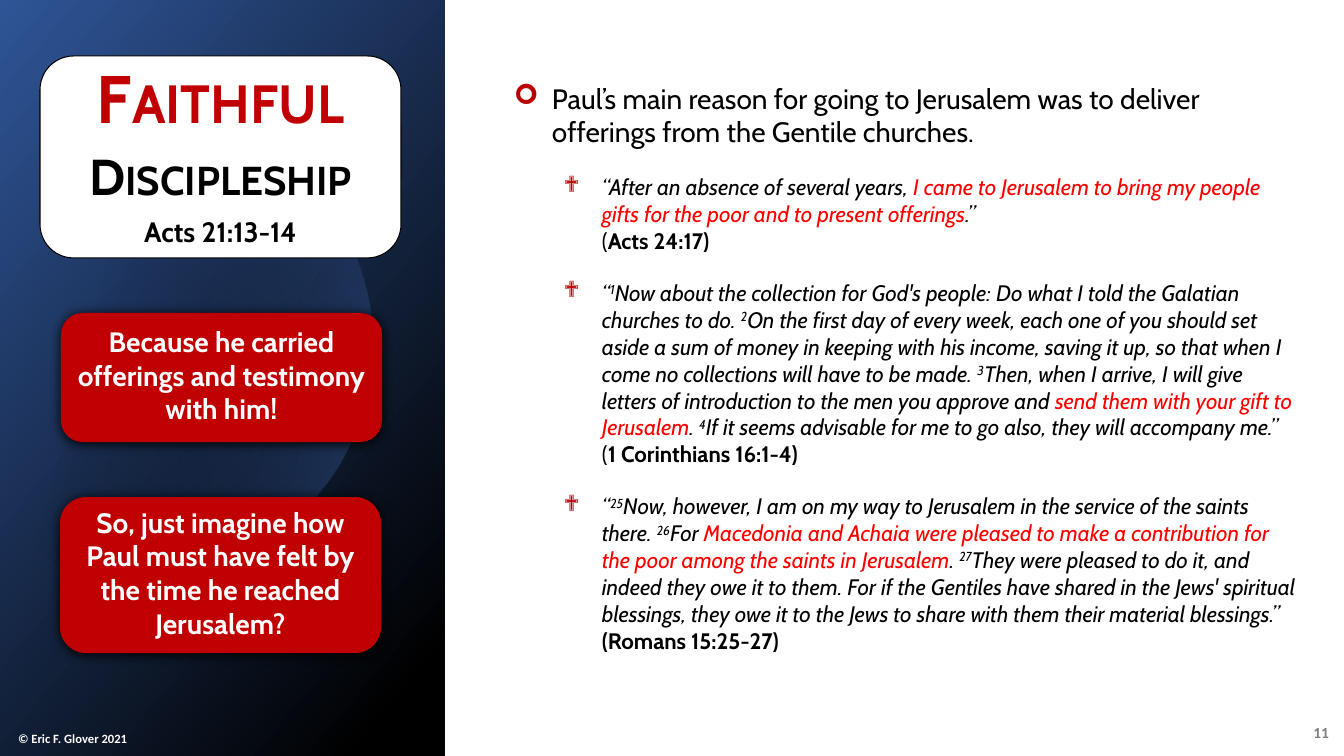
"""Build the Faithful Discipleship slide on Paul's offerings for Jerusalem."""
from math import cos, radians, sin

from lxml.etree import SubElement
from pptx import Presentation
from pptx.dml.color import RGBColor
from pptx.enum.shapes import MSO_SHAPE as Preset
from pptx.enum.text import MSO_ANCHOR as Anchor, PP_ALIGN as Align
from pptx.oxml.ns import qn
from pptx.util import Pt

EMU_PER_PX = 914400 / 100.8
RED, BULLET_RED, BLACK, WHITE = "C00000", "B90000", "000000", "FFFFFF"
QUOTE = {"size": 16, "italic": True}
STYLES = {
    "quote": QUOTE,
    "verse": QUOTE | {"raised": True},
    "stress": QUOTE | {"color": "FF0000"},
    "open": {"size": 16},
    "source": {"size": 16, "bold": True},
}
PASSAGES = [
    ([("quote", "“After an absence of several years, "),
      ("stress", "I came to Jerusalem to bring my people gifts for the poor and to present offerings"),
      ("quote", ".” ")],
     [("open", "("), ("source", "Acts 24:17)")]),
    ([("quote", "“"), ("verse", "1"),
      ("quote", "Now about the collection for God's people: Do what I told the Galatian churches to do. "),
      ("verse", "2"),
      ("quote", "On the first day of every week, each one of you should set aside a sum of money in keeping "
                "with his income, saving it up, so that when I come no collections will have to be made. "),
      ("verse", "3"),
      ("quote", "Then, when I arrive, I will give letters of introduction to the men you approve and "),
      ("stress", "send them with your gift to Jerusalem"), ("quote", ". "), ("verse", "4"),
      ("quote", "If it seems advisable for me to go also, they will accompany me.”")],
     [("open", "("), ("source", "1 Corinthians 16:1-4)")]),
    ([("quote", "“"), ("verse", "25"),
      ("quote", "Now, however, I am on my way to Jerusalem in the service of the saints there. "),
      ("verse", "26"), ("quote", "For "),
      ("stress", "Macedonia and Achaia were pleased to make a contribution for the poor among the saints "
                 "in Jerusalem"),
      ("quote", ". "), ("verse", "27"),
      ("quote", "They were pleased to do it, and indeed they owe it to them. For if the Gentiles have shared "
                "in the Jews' spiritual blessings, they owe it to the Jews to share with them their material "
                "blessings.”")],
     [("source", "(Romans 15:25-27)")]),
]


def px(length):
    """Turn pixels into EMU."""
    return round(length * EMU_PER_PX)


def color(value):
    """Turn a hex string into a colour."""
    return RGBColor.from_string(value)


def set_all(target, values):
    """Set each named attribute of the target."""
    for name, value in values.items():
        setattr(target, name, value)


def add_span(para, text, size, color_hex=BLACK, bold=False, italic=False, font="Cabin",
             raised=False, small_caps=False):
    """Add one formatted run to a paragraph."""
    span = para.add_run()
    span.text = text
    set_all(span.font, {"size": Pt(size), "bold": bold, "italic": italic, "name": font})
    span.font.color.rgb = color(color_hex)
    properties = span.font._element
    if raised:
        properties.set("baseline", "30000")
    if small_caps:
        properties.set("cap", "small")


def add_styled(para, spans):
    """Add runs given as pairs of style name and text."""
    for style, text in spans:
        values = dict(STYLES[style])
        add_span(para, text, color_hex=values.pop("color", BLACK), **values)


def add_bullet(para, mark, indent):
    """Give a paragraph a red bullet with a hanging indent."""
    para.space_after = Pt(18)
    properties = para._p.get_or_add_pPr()
    properties.set("marL", str(px(indent)))
    properties.set("indent", str(px(-38)))
    bullet_color = SubElement(properties, qn("a:buClr"))
    SubElement(bullet_color, qn("a:srgbClr"), val=BULLET_RED)
    SubElement(properties, qn("a:buFont"), typeface="Wingdings")
    SubElement(properties, qn("a:buChar"), char=mark)


def fill_gradient(shape, stops, angle):
    """Fill a shape with two stops of position, colour and opacity at a clockwise angle."""
    shape.fill.gradient()
    shape.fill.gradient_angle = 360 - angle
    for stop, (position, color_hex, opacity) in zip(shape.fill.gradient_stops, stops):
        stop.position = position
        stop.color.rgb = color(color_hex)
        if opacity < 100:
            mark = stop._gs.find(qn("a:srgbClr"))
            SubElement(mark, qn("a:alpha"), val=str(opacity * 1000))


def add_box(page, place, preset, fill=None):
    """Add a preset shape without shadow or line."""
    box = page.shapes.add_shape(preset, *map(px, place))
    box.shadow.inherit = False
    box.line.fill.background()
    if fill:
        box.fill.solid()
        box.fill.fore_color.rgb = color(fill)
    return box


def set_frame(shape, anchor, margins):
    """Wrap and anchor the text of a shape and set left, top, right and bottom margins."""
    frame = shape.text_frame
    set_all(frame, {"word_wrap": True, "vertical_anchor": anchor})
    sides = ("margin_left", "margin_top", "margin_right", "margin_bottom")
    set_all(frame, dict(zip(sides, map(px, margins))))
    return frame


def add_panel(page):
    """Add the dark side panel and the faint disc on it."""
    panel = add_box(page, (0, 0, 445, 756), Preset.RECTANGLE)
    fill_gradient(panel, [(0, "2F5597", 100), (0.92, BLACK, 100)], 40)
    center_x, center_y, radius = 140, 344, 233
    arc = [(px(center_x + radius * cos(radians(turn))), px(center_y + radius * sin(radians(turn))))
           for turn in range(-126, 127, 2)]
    builder = page.shapes.build_freeform(*arc[0])
    builder.add_line_segments(arc[1:], close=True)
    disc = builder.convert_to_shape()
    disc.shadow.inherit = False
    disc.line.fill.background()
    fill_gradient(disc, [(0.29, BLACK, 0), (1, "4472C4", 43)], 14)


def add_title(page):
    """Add the white title card."""
    card = add_box(page, (40, 56, 361, 202), Preset.ROUNDED_RECTANGLE, WHITE)
    card.line.color.rgb = color(BLACK)
    card.line.width = Pt(0.75)
    frame = set_frame(card, Anchor.MIDDLE, (0, 0, 0, 10))
    lines = [("Faithful", 48, RED, True), ("Discipleship", 36, BLACK, True),
             ("Acts 21:13-14", 20, BLACK, False)]
    for index, (text, size, color_hex, small_caps) in enumerate(lines):
        para = frame.add_paragraph() if index else frame.paragraphs[0]
        set_all(para, {"alignment": Align.CENTER, "space_after": Pt(6)})
        add_span(para, text, size, color_hex, bold=True, small_caps=small_caps)


def add_callout(page, place, text):
    """Add a red card with a soft shadow."""
    card = add_box(page, place, Preset.ROUNDED_RECTANGLE, RED)
    effects = card._element.spPr.find(qn("a:effectLst"))
    shadow = SubElement(effects, qn("a:outerShdw"), blurRad=str(Pt(8.5)), dist=str(Pt(1)),
                        dir="5400000", algn="t", rotWithShape="0")
    SubElement(shadow, qn("a:srgbClr"), val=BLACK)
    para = set_frame(card, Anchor.MIDDLE, (10, 0, 10, 5)).paragraphs[0]
    para.alignment = Align.CENTER
    add_span(para, text, 20, WHITE, bold=True)


def add_passages(page):
    """Add the main point and the passages under it."""
    box = page.shapes.add_textbox(*map(px, (504, 76, 804, 643)))
    frame = set_frame(box, Anchor.TOP, (10, 5, 10, 5))
    point = frame.paragraphs[0]
    add_bullet(point, "➢", 38)
    add_span(point, "Paul’s main reason for going to Jerusalem was to deliver offerings "
                    "from the Gentile churches.", 20)
    for quote, source in PASSAGES:
        para = frame.add_paragraph()
        para.level = 1
        add_bullet(para, "❖", 88)
        add_styled(para, quote)
        para.add_line_break()
        add_styled(para, source)


def add_label(page, place, text, size, color_hex, anchor, alignment):
    """Add a small label at the foot of the page."""
    box = page.shapes.add_textbox(*map(px, place))
    para = set_frame(box, anchor, (10, 5, 10, 5)).paragraphs[0]
    para.alignment = alignment
    add_span(para, text, size, color_hex, bold=True, font="Calibri")


def main():
    """Build and save the deck."""
    deck = Presentation()
    set_all(deck, {"slide_width": px(1344), "slide_height": px(756)})
    page = deck.slides.add_slide(deck.slide_layouts[6])
    add_panel(page)
    add_label(page, (8, 723, 158, 28), "© Eric F. Glover 2021", 9, WHITE, Anchor.BOTTOM, Align.LEFT)
    add_label(page, (1290, 712, 49, 40), "11", 11, "808080", Anchor.MIDDLE, Align.RIGHT)
    add_passages(page)
    add_callout(page, (61, 313, 321, 129), "Because he carried offerings and testimony with him!")
    add_callout(page, (60, 497, 321, 156),
                "So, just imagine how Paul must have felt by the time he reached Jerusalem?")
    add_title(page)
    deck.save("out.pptx")


if __name__ == "__main__":
    main()
